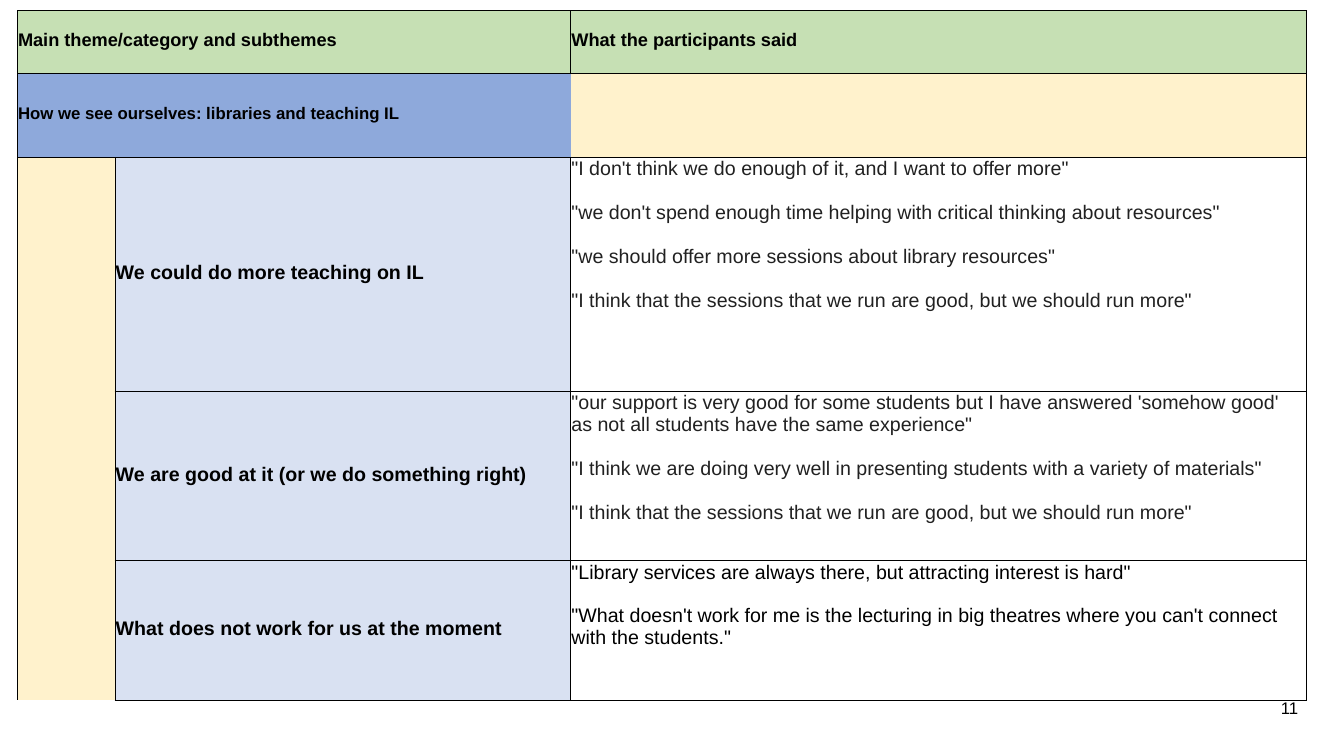
from lxml import etree
from pptx import Presentation
from pptx.dml.color import RGBColor
from pptx.enum.text import MSO_ANCHOR, PP_ALIGN
from pptx.oxml.ns import qn
from pptx.util import Pt

BLACK = RGBColor(0x00, 0x00, 0x00)
QUOTE_GREY = RGBColor(0x21, 0x21, 0x21)
GREEN = RGBColor(0xC6, 0xE0, 0xB4)
BLUE = RGBColor(0x8E, 0xA9, 0xDB)
PALE_BLUE = RGBColor(0xD9, 0xE1, 0xF2)
CREAM = RGBColor(0xFF, 0xF2, 0xCC)
TOP, MIDDLE = MSO_ANCHOR.TOP, MSO_ANCHOR.MIDDLE
LEFT, RIGHT = PP_ALIGN.LEFT, PP_ALIGN.RIGHT

COLUMNS = [69.8, 325.5, 525.5]
ROWS = [44.6, 60.2, 167, 121, 99.7]
THEMES = [
    ("We could do more teaching on IL", QUOTE_GREY, [
        "\"I don't think we do enough of it, and I want to offer more\"",
        "\"we don't spend enough time helping with critical thinking about resources\"",
        "\"we should offer more sessions about library resources\"",
        "\"I think that the sessions that we run are good, but we should run more\"",
    ]),
    ("We are good at it (or we do something right)", QUOTE_GREY, [
        "\"our support is very good for some students but I have answered "
        "'somehow good' as not all students have the same experience\"",
        "\"I think we are doing very well in presenting students with a variety of materials\"",
        "\"I think that the sessions that we run are good, but we should run more\"",
    ]),
    ("What does not work for us at the moment", BLACK, [
        "\"Library services are always there, but attracting interest is hard\"",
        "\"What doesn't work for me is the lecturing in big theatres where you "
        "can't connect with the students.\"",
    ]),
]


class SlideBuilder:
    font = "Arial"
    quote_gap = 15.5
    border = 0.5

    def __init__(self, prs):
        self.s = prs.slides.add_slide(prs.slide_layouts[6])

    def paragraphs(self, tf, lines, size, color=BLACK, bold=False, align=LEFT):
        for i, line in enumerate(lines):
            p = tf.add_paragraph() if i else tf.paragraphs[0]
            p.text = line
            p.alignment = align
            if i:
                p.space_before = Pt(self.quote_gap)
            for r in p.runs:
                r.font.name = self.font
                r.font.size = Pt(size)
                r.font.bold = bold
                r.font.color.rgb = color

    def text(self, x, y, w, h, line, size, align):
        tf = self.s.shapes.add_textbox(Pt(x), Pt(y), Pt(w), Pt(h)).text_frame
        tf.word_wrap = True
        tf.margin_left = tf.margin_right = tf.margin_top = tf.margin_bottom = 0
        tf.vertical_anchor = MIDDLE
        self.paragraphs(tf, [line], size, align=align)

    def table(self, x, y, columns, rows):
        table = self.s.shapes.add_table(len(rows), len(columns), Pt(x), Pt(y),
                                        Pt(sum(columns)), Pt(sum(rows))).table
        table.first_row = table.horz_banding = False
        for column, width in zip(table.columns, columns):
            column.width = Pt(width)
        for row, height in zip(table.rows, rows):
            row.height = Pt(height)
        return table

    def cell(self, cell, lines=(), fill=None, sides="LRTB", anchor=MIDDLE, **style):
        """Fill one cell; sides names the edges that carry a line."""
        cell.margin_left = cell.margin_right = cell.margin_top = Pt(0.5)
        cell.margin_bottom = Pt(3)
        cell.vertical_anchor = anchor
        self.edges(cell, sides)
        if fill is None:
            cell.fill.background()
        else:
            cell.fill.solid()
            cell.fill.fore_color.rgb = fill
        if lines:
            self.paragraphs(cell.text_frame, lines, **style)

    def edges(self, cell, sides):
        tc_pr = cell._tc.get_or_add_tcPr()
        for side in "LRTB":
            ln = etree.SubElement(tc_pr, qn("a:ln" + side), w=str(Pt(self.border)))
            if side in sides:
                paint = etree.SubElement(ln, qn("a:solidFill"))
                etree.SubElement(paint, qn("a:srgbClr"), val=str(BLACK))
            else:
                etree.SubElement(ln, qn("a:noFill"))


def main():
    prs = Presentation()
    prs.slide_width, prs.slide_height = Pt(960), Pt(540)
    slide = SlideBuilder(prs)
    slide.text(892, 491, 35.3, 28.8, "11", 12, RIGHT)

    table = slide.table(12.4, 7.7, COLUMNS, ROWS)
    for row in range(2):
        table.cell(row, 0).merge(table.cell(row, 1))

    for column, title in ((0, "Main theme/category and subthemes"),
                          (2, "What the participants said")):
        slide.cell(table.cell(0, column), [title], GREEN, size=13, bold=True)
    slide.cell(table.cell(0, 1), fill=GREEN)

    slide.cell(table.cell(1, 0), ["How we see ourselves: libraries and teaching IL"],
               BLUE, "LTB", size=12, bold=True)
    slide.cell(table.cell(1, 1), fill=BLUE, sides="TB")
    slide.cell(table.cell(1, 2), fill=CREAM, sides="RTB")

    for row, (theme, color, quotes) in enumerate(THEMES, start=2):
        slide.cell(table.cell(row, 0), fill=CREAM, sides="LRT" if row == 2 else "LR")
        slide.cell(table.cell(row, 1), [theme], PALE_BLUE, size=14, bold=True)
        slide.cell(table.cell(row, 2), quotes, anchor=TOP, size=14, color=color)

    prs.save("out.pptx")


if __name__ == "__main__":
    main()
